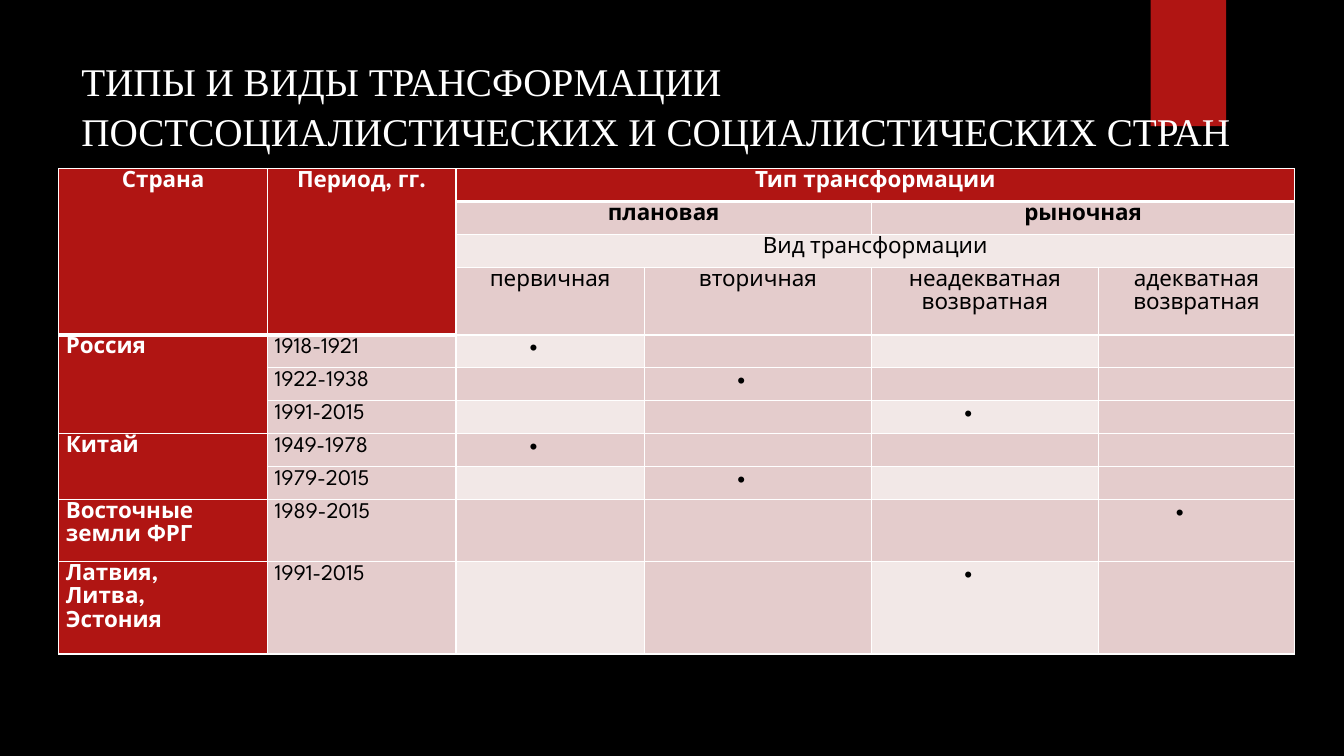
from dataclasses import dataclass

from lxml.etree import SubElement
from pptx import Presentation
from pptx.dml.color import RGBColor as Rgb
from pptx.enum.shapes import MSO_SHAPE as Shape
from pptx.enum.text import PP_ALIGN as Align
from pptx.oxml.ns import qn
from pptx.util import Cm, Pt


@dataclass(frozen=True)
class Theme:
    background: str = "000000"
    accent: str = "B01513"
    tint: str = "E4CCCC"
    light: str = "F2E8E7"
    white: str = "FFFFFF"
    black: str = "000000"
    title_font: str = "Times New Roman"
    table_font: str = "League Spartan"
    title_size: int = 28
    table_size: int = 16
    thin: int = 1
    thick: int = 3


TITLE = "ТИПЫ И ВИДЫ ТРАНСФОРМАЦИИ\vПОСТСОЦИАЛИСТИЧЕСКИХ И СОЦИАЛИСТИЧЕСКИХ СТРАН"
COLUMN_WIDTHS = [5.26, 4.75, 4.75, 5.72, 5.72, 4.95]
ROW_HEIGHTS = [0.83] * 3 + [1.7] + [0.83] * 5 + [1.48, 2.25]
HEADER_ROWS = 4
HEADINGS = {
    (0, 0): "Страна",
    (0, 1): "Период, гг.",
    (0, 2): "Тип трансформации",
    (1, 2): "плановая",
    (1, 4): "рыночная",
    (2, 2): "Вид трансформации",
    (3, 2): "первичная",
    (3, 3): "вторичная",
    (3, 4): "неадекватная возвратная",
    (3, 5): "адекватная возвратная",
}
SPANS = {
    (0, 0): (3, 0), (0, 1): (3, 1), (0, 2): (0, 5), (1, 2): (1, 3),
    (1, 4): (1, 5), (2, 2): (2, 5), (4, 0): (6, 0), (7, 0): (8, 0),
}
COUNTRIES = {4: "Россия", 7: "Китай", 9: "Восточные\nземли ФРГ", 10: "Латвия,\nЛитва,\nЭстония"}
PERIODS = [
    ("1918-1921", 2), ("1922-1938", 3), ("1991-2015", 4), ("1949-1978", 2),
    ("1979-2015", 3), ("1989-2015", 5), ("1991-2015", 4),
]


class SlideBuilder:
    def __init__(self, slide, theme):
        self.slide = slide
        self.theme = theme
        self.fill(slide.background, theme.background)

    def fill(self, target, color):
        target.fill.solid()
        target.fill.fore_color.rgb = Rgb.from_string(color)

    def style(self, paragraph, font, size, color, bold=False):
        for run in paragraph.runs:
            run.font.name = font
            run.font.size = Pt(size)
            run.font.bold = bold
            run.font.color.rgb = Rgb.from_string(color)

    def ribbon(self, left, top, width, height):
        ribbon = self.slide.shapes.add_shape(Shape.RECTANGLE, Cm(left), Cm(top), Cm(width), Cm(height))
        ribbon.shadow.inherit = False
        self.fill(ribbon, self.theme.accent)
        ribbon.line.fill.background()

    def title(self, text, left, top, width, height):
        frame = self.slide.shapes.add_textbox(Cm(left), Cm(top), Cm(width), Cm(height)).text_frame
        frame.word_wrap = True
        heading = frame.paragraphs[0]
        heading.text = text
        heading.line_spacing = 1.05
        self.style(heading, self.theme.title_font, self.theme.title_size, self.theme.white)

    def table(self, left, top, widths, heights):
        table = self.slide.shapes.add_table(
            len(heights), len(widths), Cm(left), Cm(top), Cm(sum(widths)), Cm(sum(heights))
        ).table
        table.first_row = table.horz_banding = False
        for column, width in zip(table.columns, widths):
            column.width = Cm(width)
        for row, height in zip(table.rows, heights):
            row.height = Cm(height)
        return table

    def borders(self, cell, bottom):
        properties = cell._tc.get_or_add_tcPr()
        for position, side in enumerate(("lnL", "lnR", "lnT", "lnB")):
            weight = bottom if side == "lnB" else self.theme.thin
            line = properties.makeelement(qn(f"a:{side}"), {"w": str(Pt(weight))})
            SubElement(SubElement(line, qn("a:solidFill")), qn("a:srgbClr"), val=self.theme.white)
            properties.insert(position, line)

    def cell(self, cell, text, align, background, color, bold, bottom):
        cell.margin_left = cell.margin_right = Cm(0.18)
        cell.margin_top = cell.margin_bottom = 0
        self.fill(cell, background)
        self.borders(cell, bottom)
        cell.text_frame.text = text
        for paragraph in cell.text_frame.paragraphs:
            paragraph.alignment = align
            paragraph.line_spacing = 1.15
            self.style(paragraph, self.theme.table_font, self.theme.table_size, color, bold)
            if not text:
                SubElement(paragraph._p, qn("a:endParaRPr"), sz=str(self.theme.table_size * 100))

    def mark(self, cell):
        paragraph = cell.text_frame.paragraphs[0]
        properties = paragraph._p.get_or_add_pPr()
        properties.set("marL", str(Cm(0.9)))
        properties.set("indent", str(-Cm(0.9)))
        SubElement(properties, qn("a:buFont"), typeface="Arial")
        SubElement(properties, qn("a:buChar"), char="•")


def main():
    theme = Theme()
    presentation = Presentation()
    presentation.slide_width, presentation.slide_height = Cm(33.87), Cm(19.05)
    builder = SlideBuilder(presentation.slides.add_slide(presentation.slide_layouts[6]), theme)
    builder.ribbon(29, 0, 1.9, 3.18)
    builder.title(TITLE, 1.8, 1.27, 30.45, 2.62)
    table = builder.table(1.48, 4.25, COLUMN_WIDTHS, ROW_HEIGHTS)

    texts = dict(HEADINGS)
    texts.update({(row, 0): country for row, country in COUNTRIES.items()})
    marks = set()
    for row, (period, kind) in enumerate(PERIODS, HEADER_ROWS):
        texts[row, 1] = period
        texts[row, kind] = " "
        marks.add((row, kind))

    for row in range(len(ROW_HEIGHTS)):
        for column in range(len(COLUMN_WIDTHS)):
            header = row < HEADER_ROWS
            accented = row == 0 or column == 0 or (header and column == 1)
            shaded = theme.light if row % 2 == 0 and column % 2 == 0 else theme.tint
            heavy = row == 0 or (row == HEADER_ROWS - 1 and column < 2)
            builder.cell(
                table.cell(row, column),
                texts.get((row, column), ""),
                Align.CENTER if header or column > 1 else Align.JUSTIFY,
                theme.accent if accented else shaded,
                theme.white if accented else theme.black,
                accented or row == 1,
                theme.thick if heavy else theme.thin,
            )
    for position in marks:
        builder.mark(table.cell(*position))
    for start, end in SPANS.items():
        table.cell(*start).merge(table.cell(*end))

    presentation.save("out.pptx")


if __name__ == "__main__":
    main()
